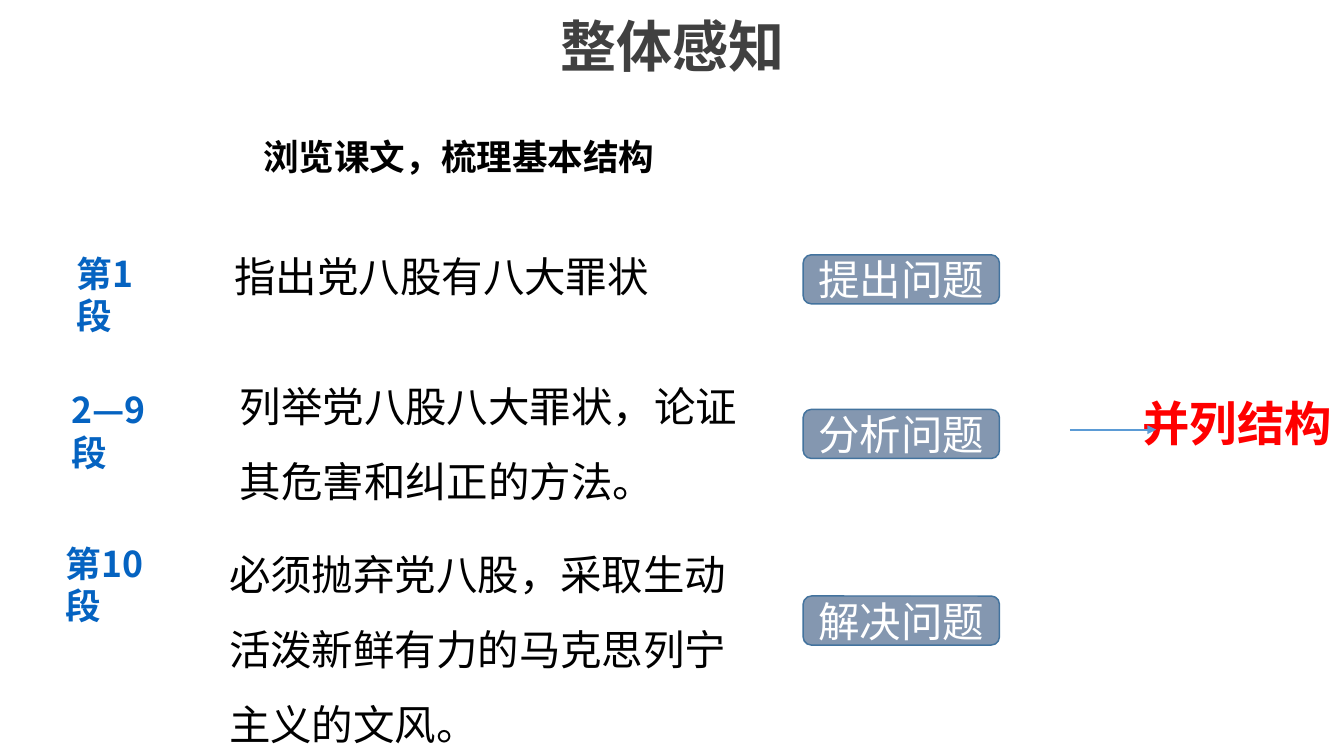
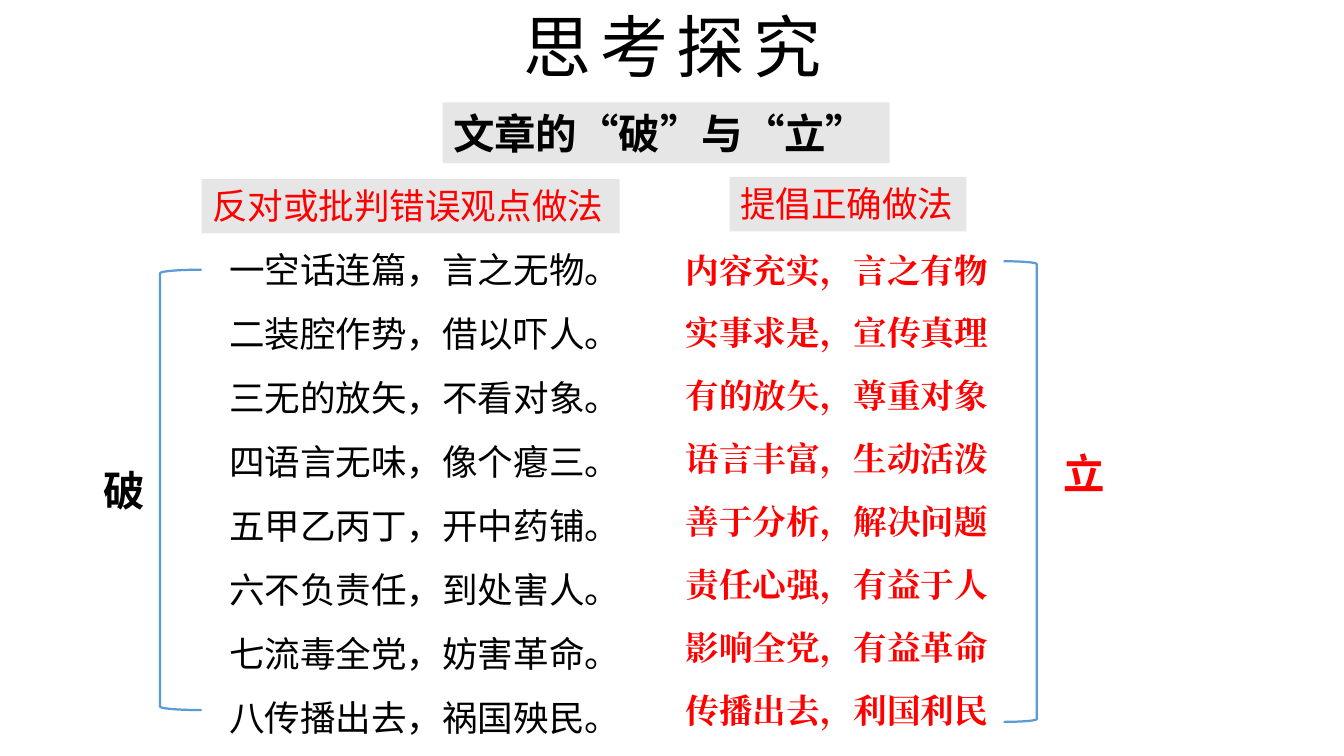
"""Build two lesson slides on the structure and argument of an essay."""
import dataclasses

import lxml.etree
import pptx
import pptx.dml.color
import pptx.enum.shapes
import pptx.enum.text
import pptx.oxml.ns
import pptx.util

Inches = pptx.util.Inches
Pt = pptx.util.Pt
RGB = pptx.dml.color.RGBColor.from_string
SHAPE = pptx.enum.shapes.MSO_SHAPE
ALIGN = pptx.enum.text.PP_ALIGN
ANCHOR = pptx.enum.text.MSO_ANCHOR
qn = pptx.oxml.ns.qn


@dataclasses.dataclass(frozen=True)
class Theme:
    ink: str = "000000"
    heading: str = "404040"
    accent: str = "FF0000"
    label: str = "0563C1"
    white: str = "FFFFFF"
    chip: str = "8497B0"
    chip_edge: str = "43739E"
    band: str = "E7E6E6"
    rule: str = "5B9BD5"
    sans: str = "Noto Sans CJK SC"
    latin: str = "Arial"
    serif: str = "Times New Roman"
    conclusion: float = 32
    large: float = 28
    body: float = 24
    remedy: float = 22.7


theme = Theme()


def write(shape, lines, size, color, bold=False, font=theme.sans,
          align=ALIGN.LEFT, anchor=ANCHOR.TOP, leading=1.0, tracking=0):
    frame = shape.text_frame
    frame.word_wrap = True
    frame.auto_size = pptx.enum.text.MSO_AUTO_SIZE.NONE
    frame.vertical_anchor = anchor
    frame.text = "\n".join(lines)
    for paragraph in frame.paragraphs:
        paragraph.alignment = align
        paragraph.line_spacing = leading
        paragraph.font.name = font
        paragraph.font.size = Pt(size)
        paragraph.font.bold = bold
        paragraph.font.color.rgb = RGB(color)
        properties = paragraph._p.pPr.find(qn("a:defRPr"))
        properties.set("spc", str(tracking * 100))
        properties.find(qn("a:latin")).addnext(
            properties.makeelement(qn("a:ea"), {"typeface": font}))


def add_box(slide, box, preset=None, fill=None, edge=None, weight=1):
    place = [Inches(length) for length in box]
    if preset is None:
        return slide.shapes.add_textbox(*place)
    shape = slide.shapes.add_shape(preset, *place)
    shape.shadow.inherit = False
    if fill:
        shape.fill.solid()
        shape.fill.fore_color.rgb = RGB(fill)
    else:
        shape.fill.background()
    if edge:
        shape.line.color.rgb = RGB(edge)
        shape.line.width = Pt(weight)
    else:
        shape.line.fill.background()
    return shape


deck = pptx.Presentation()
deck.slide_width, deck.slide_height = Inches(12.6), Inches(7.09)

slides = []
for heading, size, color, bold, font, tracking in [
    ("整体感知", 37.8, theme.heading, True, theme.sans, 0),
    ("思考探究", 45.9, theme.ink, False, theme.latin, 6),
]:
    slide = deck.slides.add_slide(deck.slide_layouts[5])
    title = slide.shapes.title
    title.left, title.top = Inches(0.87), Inches(0)
    title.width, title.height = Inches(10.87), Inches(0.85)
    write(title, [heading], size, color, bold, font,
          ALIGN.CENTER, ANCHOR.MIDDLE, tracking=tracking)
    slides.append(slide)
overview, inquiry = slides

task = add_box(overview, (2.37, 1.27, 3.99, 0.4))
write(task, ["浏览课文，梳理基本结构"], theme.body, theme.ink, True, anchor=ANCHOR.MIDDLE)

for label, label_box, summary, summary_box, leading, stage, stage_top in [
    ("第1段", (0.62, 2.31, 1.04, 0.5), "指出党八股有八大罪状",
     (2.1, 2.31, 4.28, 0.57), 1.0, "提出问题", 2.39),
    ("2—9段", (0.57, 3.59, 1.21, 0.5), "列举党八股八大罪状，论证其危害和纠正的方法。",
     (2.15, 3.29, 5.09, 1.5), 1.5, "分析问题", 3.84),
    ("第10段", (0.52, 5.03, 1.21, 0.5), "必须抛弃党八股，采取生动活泼新鲜有力的马克思列宁主义的文风。",
     (2.05, 4.87, 5.06, 2.2), 1.5, "解决问题", 5.59),
]:
    write(add_box(overview, label_box), [label], theme.body, theme.label, True)
    write(add_box(overview, summary_box), [summary], theme.large, theme.ink, leading=leading)
    chip = add_box(overview, (7.53, stage_top, 1.84, 0.46),
                   SHAPE.ROUNDED_RECTANGLE, theme.chip, theme.chip_edge)
    write(chip, [stage], theme.large, theme.white, align=ALIGN.CENTER, anchor=ANCHOR.MIDDLE)

conclusion = add_box(overview, (10.61, 3.65, 1.99, 0.63))
write(conclusion, ["并列结构"], theme.conclusion, theme.accent, True)

arrow = overview.shapes.add_connector(
    pptx.enum.shapes.MSO_CONNECTOR.STRAIGHT,
    Inches(10.03), Inches(4.03), Inches(10.84), Inches(4.03))
arrow.line.color.rgb = RGB(theme.rule)
arrow.line.width = Pt(1.5)
lxml.etree.SubElement(arrow.line._get_or_add_ln(), qn("a:tailEnd"), type="triangle")
lxml.etree.SubElement(arrow._element.spPr, qn("a:effectLst"))

for text, box, size, color, bold in [
    ("文章的“破”与“立”", (4.15, 0.96, 4.19, 0.57), theme.large, theme.ink, True),
    ("反对或批判错误观点做法", (1.89, 1.68, 3.92, 0.51), theme.body, theme.accent, False),
    ("提倡正确做法", (6.84, 1.66, 2.22, 0.51), theme.body, theme.accent, False),
]:
    band = add_box(inquiry, box, SHAPE.RECTANGLE, theme.band)
    write(band, [text], size, color, bold)

faults = [
    "一空话连篇，言之无物。",
    "二装腔作势，借以吓人。",
    "三无的放矢，不看对象。",
    "四语言无味，像个瘪三。",
    "五甲乙丙丁，开中药铺。",
    "六不负责任，到处害人。",
    "七流毒全党，妨害革命。",
    "八传播出去，祸国殃民。",
]
write(add_box(inquiry, (2.05, 2.08, 4.1, 4.82)), faults, theme.body, theme.ink, leading=1.5)

remedies = [
    "内容充实，言之有物",
    "实事求是，宣传真理",
    "有的放矢，尊重对象",
    "语言丰富，生动活泼",
    "善于分析，解决问题",
    "责任心强，有益于人",
    "影响全党，有益革命",
    "传播出去，利国利民",
]
for row, remedy in enumerate(remedies):
    write(add_box(inquiry, (6.33, 2.29 + 0.59 * row, 3.5, 0.48)),
          [remedy], theme.remedy, theme.accent, True, theme.serif)

for side, side_box, color, bracket, bracket_box in [
    ("破", (0.87, 4.31, 0.77, 0.57), theme.ink,
     SHAPE.LEFT_BRACKET, (1.5, 2.53, 0.39, 4.13)),
    ("立", (9.87, 4.15, 0.77, 0.57), theme.accent,
     SHAPE.RIGHT_BRACKET, (9.41, 2.45, 0.31, 4.32)),
]:
    write(add_box(inquiry, side_box), [side], theme.large, color, True)
    add_box(inquiry, bracket_box, bracket, edge=theme.rule, weight=1.5)

deck.save("out.pptx")
